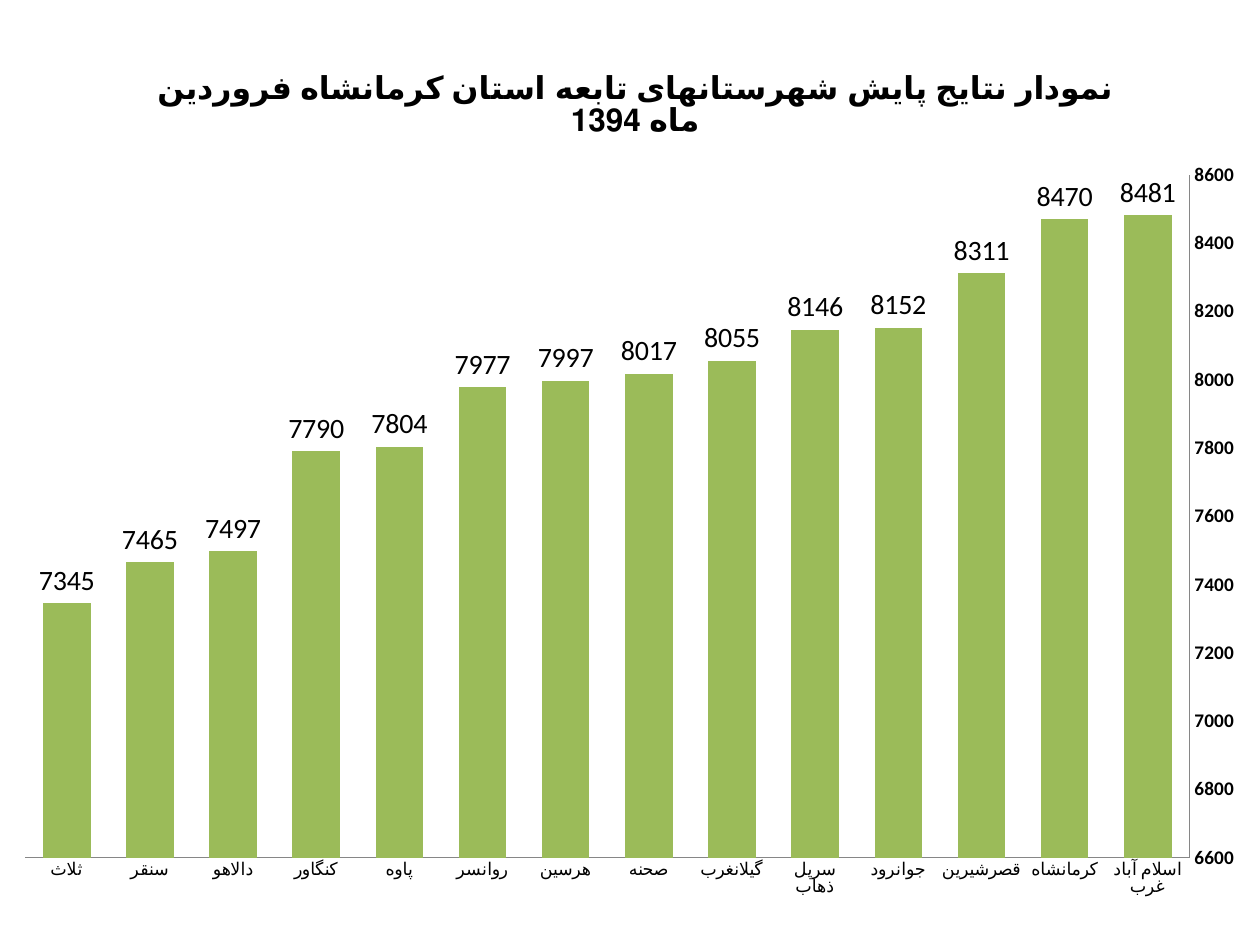
from typing import NamedTuple

import pptx
import pptx.chart.data
import pptx.dml.color
import pptx.enum.chart
import pptx.oxml
import pptx.oxml.ns
import pptx.util
from pptx.util import Inches, Pt

GREEN = pptx.dml.color.RGBColor(0x9B, 0xBB, 0x59)
BLACK = pptx.dml.color.RGBColor(0, 0, 0)
GRAY = pptx.dml.color.RGBColor(0x86, 0x86, 0x86)
FONT = "Calibri"


class County(NamedTuple):
    name: str
    score: int


COUNTIES = [
    County("اسلام آباد غرب", 8481),
    County("کرمانشاه", 8470),
    County("قصرشیرین", 8311),
    County("جوانرود", 8152),
    County("سرپل ذهاب", 8146),
    County("گیلانغرب", 8055),
    County("صحنه", 8017),
    County("هرسین", 7997),
    County("روانسر", 7977),
    County("پاوه", 7804),
    County("کنگاور", 7790),
    County("دالاهو", 7497),
    County("سنقر", 7465),
    County("ثلاث", 7345),
]
TITLE = "نمودار نتایج پایش شهرستانهای تابعه استان کرمانشاه فروردین ماه 1394"


def set_font(font, size: int, bold: bool = False) -> None:
    font.name = FONT
    font.size = Pt(size)
    font.bold = bold
    font.color.rgb = BLACK


def set_layout(parent, index: int, **fractions: float) -> None:
    """Place a chart part by fractions of the chart's size."""
    for old in parent.xpath("./c:layout"):
        parent.remove(old)
    target = '<c:layoutTarget val="inner"/>' if "w" in fractions else ""
    modes = "".join(f'<c:{key}Mode val="edge"/>' for key in "xy")
    values = "".join(f'<c:{key} val="{value}"/>' for key, value in fractions.items())
    parent.insert(index, pptx.oxml.parse_xml(
        f'<c:layout {pptx.oxml.ns.nsdecls("c")}><c:manualLayout>'
        f"{target}{modes}{values}</c:manualLayout></c:layout>"))


def style_axis(axis, size: int, bold: bool = False) -> None:
    axis.has_major_gridlines = False
    axis.major_tick_mark = pptx.enum.chart.XL_TICK_MARK.NONE
    axis.minor_tick_mark = pptx.enum.chart.XL_TICK_MARK.NONE
    axis.format.line.color.rgb = GRAY
    axis.format.line.width = Pt(0.75)
    set_font(axis.tick_labels.font, size, bold)


def add_title(chart) -> None:
    chart.has_title = True
    title = chart.chart_title
    heading = title.text_frame.paragraphs[0]
    heading.text = TITLE
    set_font(heading.font, 18, bold=True)
    heading.font.element.getparent().set("rtl", "1") if hasattr(heading.font, "element") else None
    title.include_in_layout = False
    element = chart.element.xpath("./c:chart/c:title")[0]
    element.xpath(".//a:pPr")[0].set("rtl", "1")
    for overlay in element.xpath("./c:overlay"):
        overlay.set("val", "1")
    set_layout(element, 1, x=0.12, y=0.03)


def add_county_chart(slide) -> None:
    data = pptx.chart.data.CategoryChartData(number_format="General")
    data.categories = [county.name for county in COUNTIES]
    data.add_series("Series 1", [county.score for county in COUNTIES])
    chart = slide.shapes.add_chart(
        pptx.enum.chart.XL_CHART_TYPE.COLUMN_CLUSTERED,
        Inches(0), Inches(0.31), Inches(10), Inches(6.95), data).chart
    set_font(chart.font, 10)
    chart.has_legend = False
    add_title(chart)

    style_axis(chart.category_axis, 10)
    chart.category_axis.reverse_order = True
    style_axis(chart.value_axis, 11, bold=True)
    chart.value_axis.minimum_scale = 6600
    chart.value_axis.maximum_scale = 8600
    chart.value_axis.major_unit = 200

    plot = chart.plots[0]
    plot.gap_width = 75
    plot.vary_by_categories = False
    scores = plot.series[0]
    scores.format.fill.solid()
    scores.format.fill.fore_color.rgb = GREEN
    labels = scores.data_labels
    labels.show_value = True
    labels.position = pptx.enum.chart.XL_LABEL_POSITION.OUTSIDE_END
    set_font(labels.font, 16)
    set_layout(chart.element.xpath("./c:chart/c:plotArea")[0], 0,
               x=0.02, y=0.155, w=0.924, h=0.78)


def main() -> None:
    deck = pptx.Presentation()
    deck.slide_width = Inches(10)
    deck.slide_height = Inches(7.5)
    add_county_chart(deck.slides.add_slide(deck.slide_layouts[6]))
    deck.save("out.pptx")


if __name__ == "__main__":
    main()
